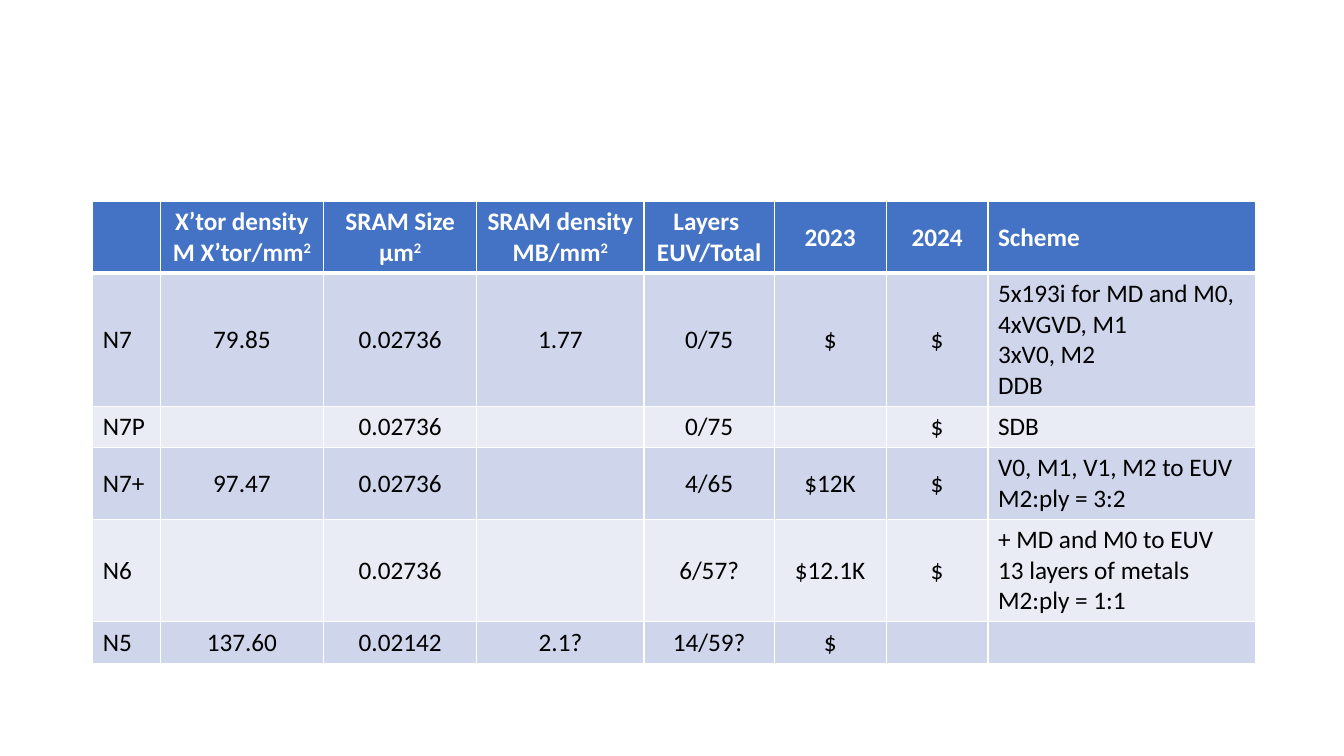
from lxml import etree
from pptx import Presentation
from pptx.dml.color import RGBColor
from pptx.enum.text import MSO_ANCHOR, PP_ALIGN
from pptx.oxml.ns import qn
from pptx.util import Inches, Pt

CENTER, LEFT = PP_ALIGN.CENTER, PP_ALIGN.LEFT
MIDDLE = MSO_ANCHOR.MIDDLE

WHITE = RGBColor(0xFF, 0xFF, 0xFF)
BLACK = RGBColor(0x00, 0x00, 0x00)
HEADER_BLUE = RGBColor(0x44, 0x72, 0xC4)
BANDS = (RGBColor(0xCF, 0xD5, 0xEA), RGBColor(0xE9, 0xEB, 0xF5))

# Lengths are percentages of the slide's width or height.
TABLE_LEFT, TABLE_TOP = 6.9, 26.67
TABLE_HEIGHT, ROW_HEIGHT = 60.13, 5.47
COLUMN_WIDTHS = (5.03, 12.15, 11.4, 12.45, 9.68, 8.33, 7.58, 19.95)

# "\n" starts a paragraph; "^" starts a superscript.
HEADER = ("", "X’tor density\nM X’tor/mm^2", "SRAM Size\nµm^2",
          "SRAM density\nMB/mm^2", "Layers \nEUV/Total", "2023", "2024", "Scheme")
NODES = (
    ("N7", "79.85", "0.02736", "1.77", "0/75", "$", "$",
     "5x193i for MD and M0,\n4xVGVD, M1\n3xV0, M2\nDDB"),
    ("N7P", "", "0.02736", "", "0/75", "", "$", "SDB"),
    ("N7+", "97.47", "0.02736", "", "4/65", "$12K", "$",
     "V0, M1, V1, M2 to EUV\nM2:ply = 3:2"),
    ("N6", "", "0.02736", "", "6/57?", "$12.1K", "$",
     "+ MD and M0 to EUV\n13 layers of metals\nM2:ply = 1:1"),
    ("N5", "137.60", "0.02142", "2.1?", "14/59?", "$", "", ""),
)


class NodeSlide:
    font_name = "Calibri"
    font_size = Pt(18)

    def __init__(self, deck):
        self.width, self.height = deck.slide_width, deck.slide_height
        self.slide = deck.slides.add_slide(deck.slide_layouts[6])

    def across(self, percent):
        return round(self.width * percent / 100)

    def down(self, percent):
        return round(self.height * percent / 100)

    def add_table(self, rows):
        frame = self.slide.shapes.add_table(
            len(rows), len(COLUMN_WIDTHS),
            self.across(TABLE_LEFT), self.down(TABLE_TOP),
            self.across(sum(COLUMN_WIDTHS)), self.down(TABLE_HEIGHT))
        table = frame.table
        table.horz_banding = False
        for column, width in zip(table.columns, COLUMN_WIDTHS):
            column.width = self.across(width)
        for row_index, texts in enumerate(rows):
            table.rows[row_index].height = self.down(ROW_HEIGHT)
            for column_index, text in enumerate(texts):
                cell = table.cell(row_index, column_index)
                self.style_cell(cell, row_index)
                outer = column_index in (0, len(texts) - 1)
                self.write_cell(cell, text, LEFT if outer else CENTER, row_index == 0)
        frame.height = self.down(TABLE_HEIGHT)

    def style_cell(self, cell, row_index):
        top = 3 if row_index == 1 else 1
        bottom = 3 if row_index == 0 else 1
        for side, points in (("L", 1), ("R", 1), ("T", top), ("B", bottom)):
            self.add_border(cell, side, points)
        cell.fill.solid()
        cell.fill.fore_color.rgb = BANDS[(row_index - 1) % 2] if row_index else HEADER_BLUE
        cell.vertical_anchor = MIDDLE

    def add_border(self, cell, side, points):
        properties = cell._tc.get_or_add_tcPr()
        line = etree.SubElement(properties, qn(f"a:ln{side}"), w=str(Pt(points)))
        fill = etree.SubElement(line, qn("a:solidFill"))
        etree.SubElement(fill, qn("a:srgbClr"), val=str(WHITE))

    def write_cell(self, cell, text, alignment, is_header):
        cell.text_frame.text = text.replace("^", "")
        for para, line in zip(cell.text_frame.paragraphs, text.split("\n")):
            para.alignment = alignment
            para.font.size = self.font_size
            base, _, superscript = line.partition("^")
            if superscript:
                para.text = base
                raised = para.add_run()
                raised.text = superscript
                raised.font._element.set("baseline", "30000")
            for span in para.runs:
                span.font.name = self.font_name
                span.font.size = self.font_size
                span.font.bold = is_header
                span.font.color.rgb = WHITE if is_header else BLACK


def main():
    deck = Presentation()
    deck.slide_width, deck.slide_height = Inches(13.33), Inches(7.5)
    NodeSlide(deck).add_table((HEADER, *NODES))
    deck.save("out.pptx")


if __name__ == "__main__":
    main()
